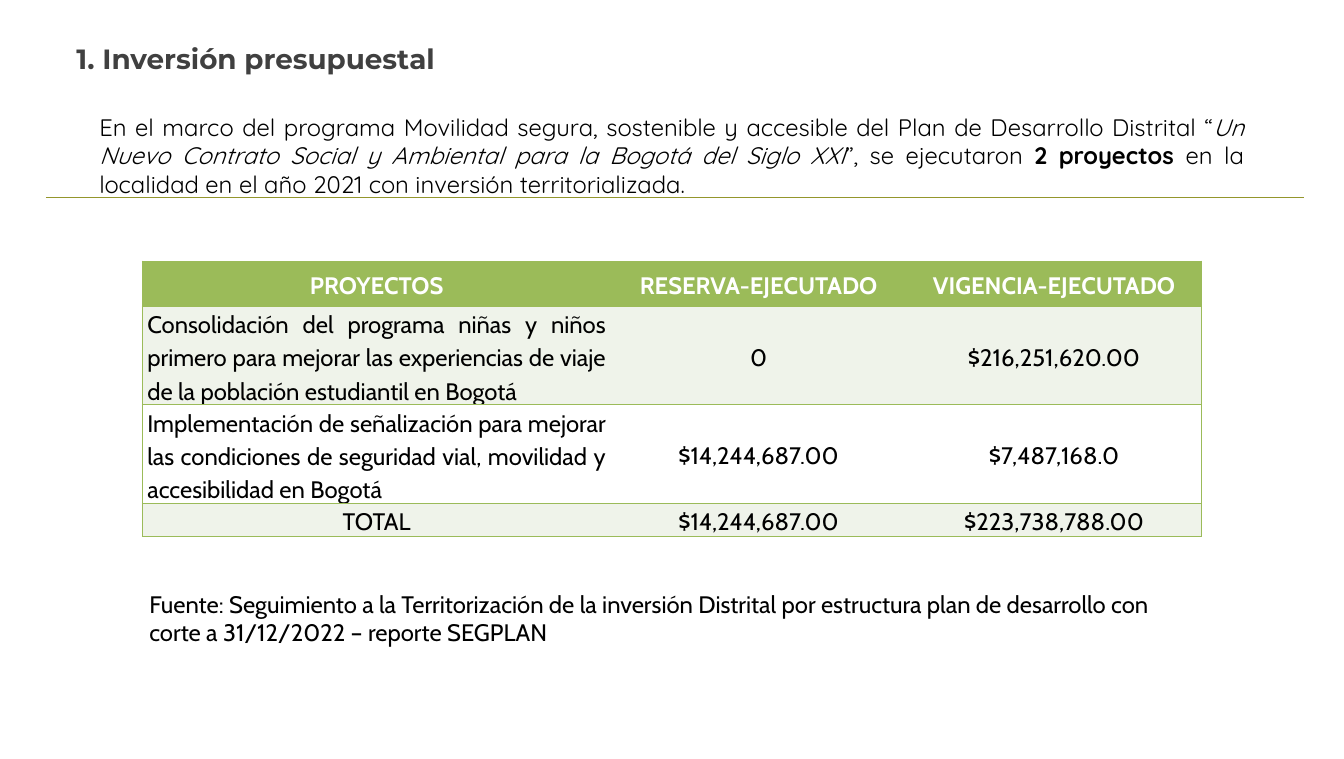
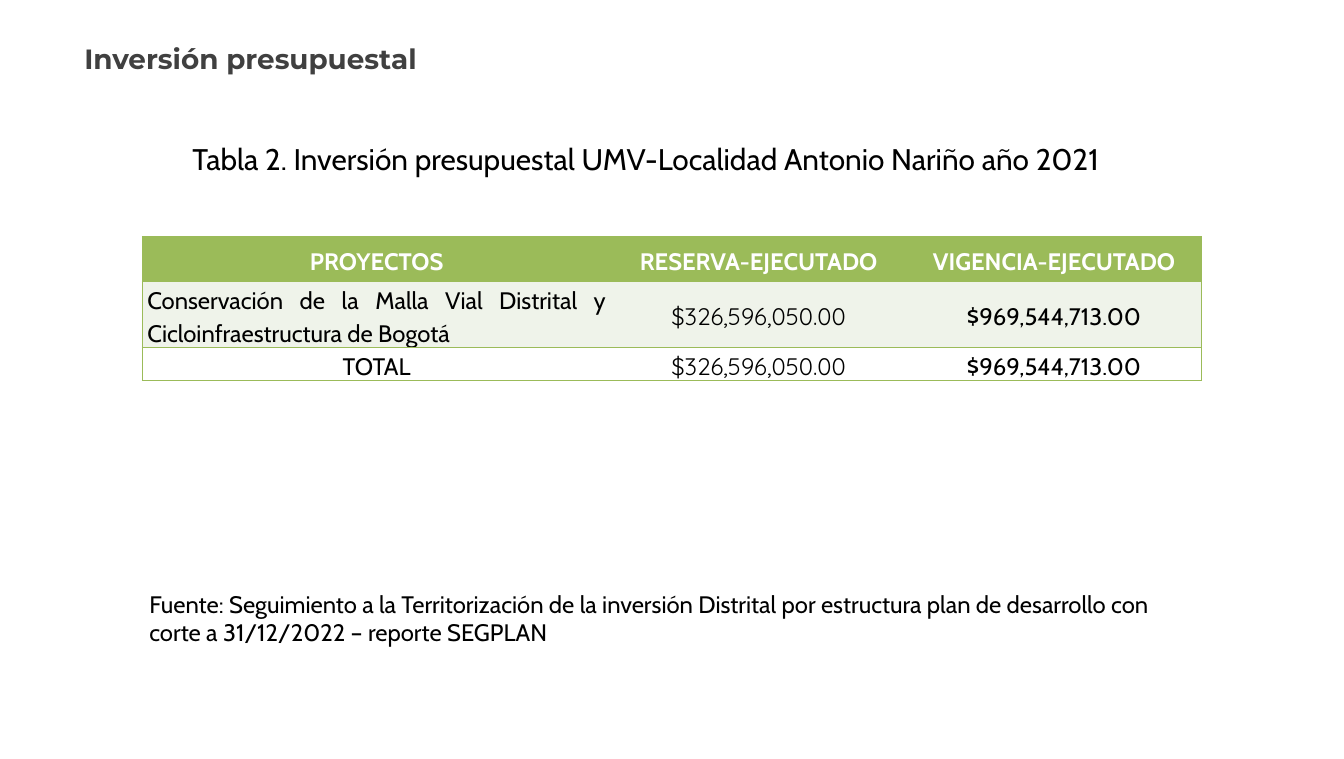
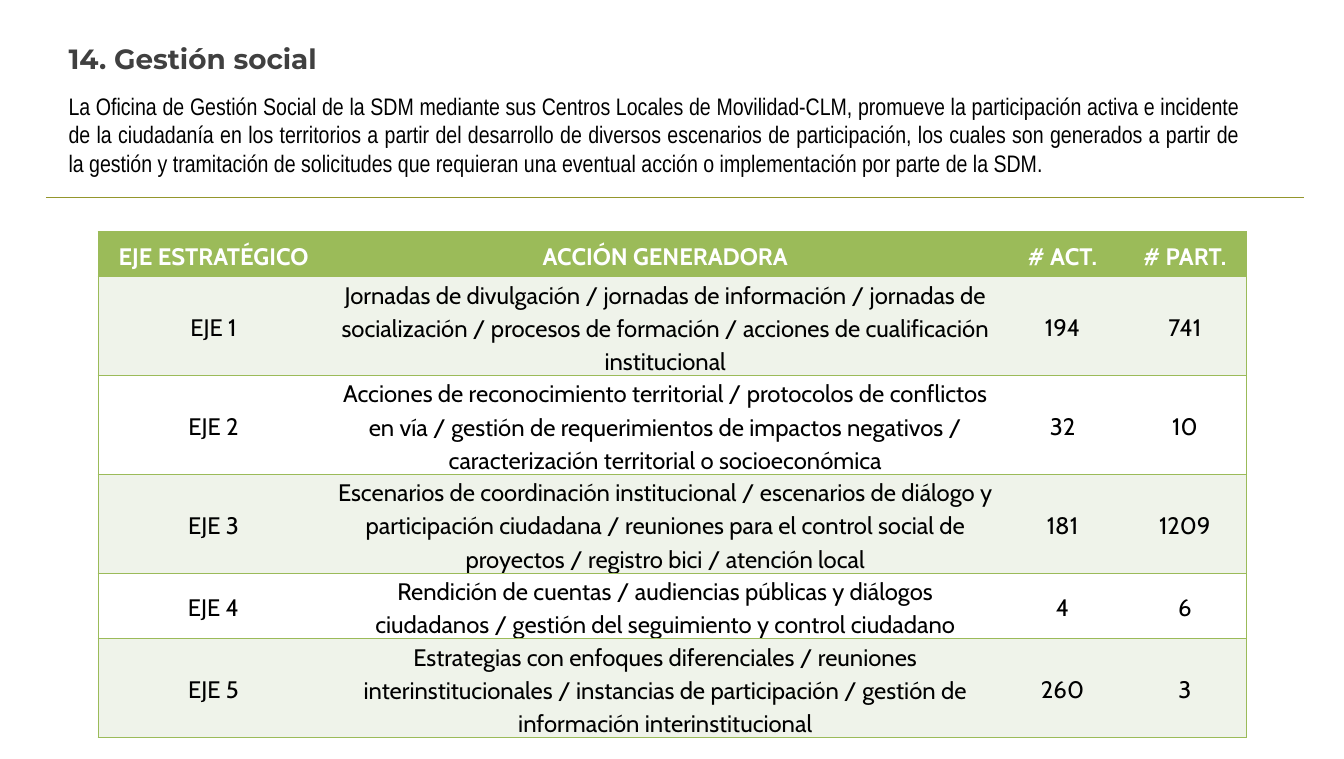
from dataclasses import dataclass
from typing import Any, NamedTuple

import pptx
import pptx.dml.color
import pptx.enum.shapes
import pptx.enum.text
import pptx.oxml
import pptx.oxml.ns
import pptx.util

Inches = pptx.util.Inches
Pt = pptx.util.Pt
ALIGN = pptx.enum.text.PP_ALIGN
MIDDLE = pptx.enum.text.MSO_ANCHOR.MIDDLE

# Shared look
GREEN, PALE, WHITE, BLACK = "9BBB59", "EFF3EA", "FFFFFF", "000000"
TITLE_GRAY, RULE_OLIVE = "404040", "94962C"
HEADER_HEIGHT, LINE_HEIGHT = 0.63, 0.46
BODY = {"name": "Cabin", "size": Pt(24)}
TITLE = {"name": "Montserrat", "size": Pt(28), "bold": True}
INTRO = {"name": "Quicksand", "size": Pt(24)}
SOCIAL_INTRO = {"name": "Arial Narrow", "size": Pt(24)}
CAPTION = {"name": "Cabin", "size": Pt(30)}
CELL = {"margin_left": Inches(0.07), "margin_right": Inches(0.07),
        "margin_top": 0, "margin_bottom": 0, "vertical_anchor": MIDDLE}
CELL_PARAGRAPH = {"line_spacing": 1.15, "space_after": Pt(10)}


class Box(NamedTuple):
    left: float
    top: float
    width: float
    height: float


class Run(NamedTuple):
    text: str
    style: dict[str, Any] = {}


class Row(NamedTuple):
    lines: int
    values: tuple[str, ...]


@dataclass
class Grid:
    left: float
    top: float
    widths: tuple[float, ...]
    headings: tuple[str, ...]
    rows: list[Row]
    aligns: tuple[ALIGN, ...]
    fonts: tuple[str, ...]


SOURCE_BOX = Box(1.99, 8.19, 14.8, 0.91)
SOURCE = ("Fuente: Seguimiento a la Territorización de la inversión Distrital por "
          "estructura plan de desarrollo con corte a 31/12/2022 – reporte SEGPLAN")


def color(value: str) -> pptx.dml.color.RGBColor:
    return pptx.dml.color.RGBColor.from_string(value)


def apply(target: Any, values: dict[str, Any]) -> None:
    for key, value in values.items():
        setattr(target, key, value)


def write(paragraph: Any, runs: list[Run], style: dict[str, Any], ink: str,
          align: ALIGN) -> None:
    paragraph.alignment = align
    for part in runs:
        run = paragraph.add_run()
        run.text = part.text
        apply(run.font, {**style, **part.style})
        run.font.color.rgb = color(ink)


def add_text(slide: Any, box: Box, runs: list[Run], style: dict[str, Any],
             ink: str = BLACK, align: ALIGN = ALIGN.LEFT) -> None:
    frame = slide.shapes.add_textbox(*map(Inches, box)).text_frame
    frame.word_wrap = True
    write(frame.paragraphs[0], runs, style, ink, align)


def add_title(slide: Any, text: str, indent: float = 0) -> None:
    add_text(slide, Box(0.86 + indent, 0.53, 11.58, 0.57), [Run(text)], TITLE, TITLE_GRAY)


def add_rule(slide: Any) -> None:
    rule = slide.shapes.add_connector(
        pptx.enum.shapes.MSO_CONNECTOR.STRAIGHT,
        Inches(0.64), Inches(2.76), Inches(18.23), Inches(2.76))
    rule.line.color.rgb = color(RULE_OLIVE)
    rule.line.width = Pt(0.75)
    rule._element.spPr.append(pptx.oxml.parse_xml(
        f'<a:effectLst {pptx.oxml.ns.nsdecls("a")}/>'))


def add_borders(cell: Any, is_first: bool, is_last: bool) -> None:
    sides = {"L": is_first, "R": is_last, "T": True, "B": True}
    properties = cell._tc.get_or_add_tcPr()
    for position, (side, visible) in enumerate(sides.items()):
        paint = (f'<a:solidFill><a:srgbClr val="{GREEN}"/></a:solidFill>'
                 if visible else "<a:noFill/>")
        properties.insert(position, pptx.oxml.parse_xml(
            f'<a:ln{side} {pptx.oxml.ns.nsdecls("a")} w="{Pt(1)}">{paint}</a:ln{side}>'))


def add_grid(slide: Any, grid: Grid) -> None:
    rows = [Row(1, grid.headings), *grid.rows]
    heights = [HEADER_HEIGHT] + [LINE_HEIGHT * row.lines for row in grid.rows]
    box = Box(grid.left, grid.top, sum(grid.widths), sum(heights))
    table = slide.shapes.add_table(len(rows), len(grid.widths), *map(Inches, box)).table
    for column, width in zip(table.columns, grid.widths):
        column.width = Inches(width)
    for r, (row, height) in enumerate(zip(rows, heights)):
        table.rows[r].height = Inches(height)
        is_header = r == 0
        for c, value in enumerate(row.values):
            cell = table.cell(r, c)
            apply(cell, CELL)
            cell.fill.solid()
            cell.fill.fore_color.rgb = color(GREEN if is_header else PALE if r % 2 else WHITE)
            add_borders(cell, c == 0, c == len(row.values) - 1)
            paragraph = cell.text_frame.paragraphs[0]
            apply(paragraph, CELL_PARAGRAPH)
            centered = is_header or value == "TOTAL"
            font = BODY["name"] if is_header else grid.fonts[c]
            write(paragraph, [Run(value)], {**BODY, "name": font, "bold": is_header},
                  WHITE if is_header else BLACK,
                  ALIGN.CENTER if centered else grid.aligns[c])


def budget_grid(top: float, rows: list[Row], reserve_font: str = "Cabin") -> Grid:
    return Grid(1.99, top, (6.55, 4.13, 4.13),
                ("PROYECTOS", "RESERVA-EJECUTADO", "VIGENCIA-EJECUTADO"), rows,
                (ALIGN.JUSTIFY, ALIGN.CENTER, ALIGN.CENTER),
                ("Cabin", reserve_font, "Cabin"))


def add_mobility_budget(slide: Any) -> None:
    add_text(slide, Box(1.29, 1.52, 16.2, 1.31), [
        Run("En el marco del programa Movilidad segura, sostenible y accesible del "
            "Plan de Desarrollo Distrital “"),
        Run("Un Nuevo Contrato Social y Ambiental para la Bogotá del Siglo XXI",
            {"italic": True}),
        Run("”, se ejecutaron "),
        Run("2 proyectos ", {"bold": True}),
        Run("en la localidad en el año 2021 con inversión territorializada."),
    ], INTRO, align=ALIGN.JUSTIFY)
    add_rule(slide)
    add_title(slide, "1. Inversión presupuestal", 0.11)
    add_grid(slide, budget_grid(3.65, [
        Row(3, ("Consolidación del programa niñas y niños primero para mejorar las "
                "experiencias de viaje de la población estudiantil en Bogotá",
                "0", "$216,251,620.00")),
        Row(3, ("Implementación de señalización para mejorar las condiciones de "
                "seguridad vial, movilidad y accesibilidad en Bogotá",
                "$14,244,687.00", "$7,487,168.0")),
        Row(1, ("TOTAL", "$14,244,687.00", "$223,738,788.00")),
    ]))
    add_text(slide, SOURCE_BOX, [Run(SOURCE)], BODY)


def add_road_budget(slide: Any) -> None:
    add_title(slide, "Inversión presupuestal", 0.22)
    add_text(slide, Box(2.59, 1.92, 13.61, 0.61),
             [Run("Tabla 2. Inversión presupuestal UMV-Localidad Antonio Nariño año 2021")],
             CAPTION)
    add_grid(slide, budget_grid(3.31, [
        Row(2, ("Conservación de la Malla Vial Distrital y Cicloinfraestructura de Bogotá",
                "$326,596,050.00", "$969,544,713.00")),
        Row(1, ("TOTAL", "$326,596,050.00", "$969,544,713.00")),
    ], "Quicksand"))
    add_text(slide, SOURCE_BOX, [Run(SOURCE)], BODY)


def add_social_management(slide: Any) -> None:
    add_text(slide, Box(0.86, 1.23, 16.56, 1.31), [
        Run("La Oficina de Gestión Social de la SDM mediante sus Centros Locales de "
            "Movilidad-CLM, promueve la participación activa e incidente de la ciudadanía "
            "en los territorios a partir del desarrollo de diversos escenarios de "
            "participación, los cuales son generados a partir de la gestión y tramitación "
            "de solicitudes que requieran una eventual acción o implementación por parte "
            "de la SDM."),
    ], SOCIAL_INTRO, align=ALIGN.JUSTIFY)
    add_rule(slide)
    add_title(slide, "14. Gestión social")
    add_grid(slide, Grid(
        1.37, 3.24, (3.23, 9.4, 1.71, 1.71),
        ("EJE ESTRATÉGICO", "ACCIÓN GENERADORA", "# ACT.", "# PART."),
        [
            Row(3, ("EJE 1", "Jornadas de divulgación / jornadas de información / jornadas "
                    "de socialización / procesos de formación / acciones de cualificación "
                    "institucional", "194", "741")),
            Row(3, ("EJE 2", "Acciones de reconocimiento territorial / protocolos de "
                    "conflictos en vía / gestión de requerimientos de impactos negativos / "
                    "caracterización territorial o socioeconómica", "32", "10")),
            Row(3, ("EJE 3", "Escenarios de coordinación institucional / escenarios de "
                    "diálogo y participación ciudadana / reuniones para el control social "
                    "de proyectos / registro bici / atención local", "181", "1209")),
            Row(2, ("EJE 4", "Rendición de cuentas / audiencias públicas y diálogos "
                    "ciudadanos / gestión del seguimiento y control ciudadano", "4", "6")),
            Row(3, ("EJE 5", "Estrategias con enfoques diferenciales / reuniones "
                    "interinstitucionales / instancias de participación / gestión de "
                    "información interinstitucional", "260", "3")),
        ],
        (ALIGN.CENTER,) * 4, ("Cabin",) * 4))


def main() -> None:
    deck = pptx.Presentation()
    apply(deck, {"slide_width": Inches(18.79), "slide_height": Inches(10.61)})
    for build in (add_mobility_budget, add_road_budget, add_social_management):
        build(deck.slides.add_slide(deck.slide_layouts[6]))
    deck.save("out.pptx")


if __name__ == "__main__":
    main()
